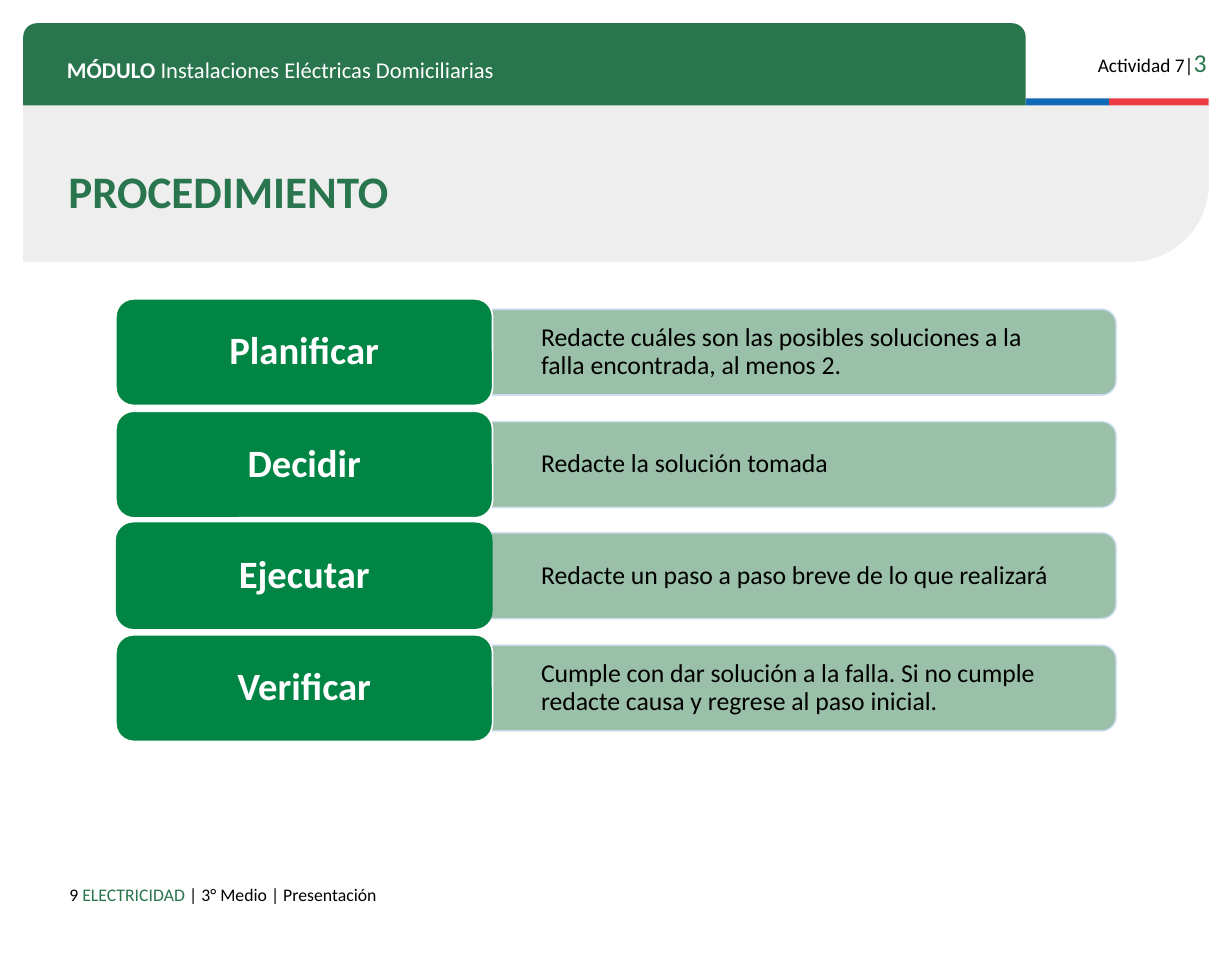
"""Build the PROCEDIMIENTO slide: module header, title band and four labelled steps."""
from lxml.etree import SubElement
from pptx import Presentation
from pptx.dml.color import RGBColor
from pptx.enum.shapes import MSO_SHAPE
from pptx.enum.text import MSO_ANCHOR, MSO_AUTO_SIZE, PP_ALIGN
from pptx.oxml.ns import qn
from pptx.util import Pt

PX = 9144
GREEN, WHITE, BLACK = "29754D", "FFFFFF", "000000"


def add_panel(kind, box, fill, line=None, corners=(), rotation=0, opacity=100):
    left, top, width, height = (value * PX for value in box)
    shape = slide.shapes.add_shape(kind, left, top, width, height)
    shape.shadow.inherit = False
    shape.rotation = rotation
    for index, corner in enumerate(corners):
        shape.adjustments[index] = corner
    shape.fill.solid()
    shape.fill.fore_color.rgb = RGBColor.from_string(fill)
    if line:
        shape.line.color.rgb = RGBColor.from_string(line)
        shape.line.width = Pt(1)
    else:
        shape.line.fill.background()
    if opacity < 100:
        for color in shape.element.spPr.iter(qn("a:srgbClr")):
            SubElement(color, qn("a:alpha"), val=str(opacity * 1000))
    return shape


def write_text(shape, runs, box=None, align=PP_ALIGN.LEFT, anchor=MSO_ANCHOR.TOP,
               spacing=1.0, margin=10):
    if box:
        shape.left, shape.top, shape.width, shape.height = (value * PX for value in box)
    frame = shape.text_frame
    frame.word_wrap = True
    frame.auto_size = MSO_AUTO_SIZE.NONE
    frame.vertical_anchor = anchor
    frame.margin_left = frame.margin_right = 10 * PX
    frame.margin_top = frame.margin_bottom = margin * PX
    paragraph = frame.paragraphs[0]
    paragraph.alignment = align
    paragraph.line_spacing = spacing
    for text, size, color, bold in runs:
        run = paragraph.add_run()
        run.text = text
        run.font.name = "Calibri"
        run.font.size = Pt(size)
        run.font.bold = bold
        run.font.color.rgb = RGBColor.from_string(color)


presentation = Presentation()
presentation.slide_width = 1063 * PX
presentation.slide_height = 827 * PX
slide = presentation.slides.add_slide(presentation.slide_layouts[5])

add_panel(MSO_SHAPE.ROUND_1_RECTANGLE, (464, -353, 135, 1023), "EEEEEE",
          corners=(0.5,), rotation=90)
add_panel(MSO_SHAPE.RECTANGLE, (885, 85, 72, 6), "0F69B4")
add_panel(MSO_SHAPE.RECTANGLE, (957, 85, 86, 6), "EB3C46")
add_panel(MSO_SHAPE.ROUND_2_SAME_RECTANGLE, (20, 20, 865, 71), GREEN, corners=(0.167, 0))

captions = [
    ((48, 38, 814, 35), PP_ALIGN.LEFT,
     [("MÓDULO", 14, WHITE, True),
      (" Instalaciones Eléctricas Domiciliarias", 14, WHITE, False)]),
    ((923, 30, 128, 38), PP_ALIGN.RIGHT,
     [("Actividad 7|", 12, BLACK, False), ("3", 16, GREEN, False)]),
    ((50, 753, 733, 38), PP_ALIGN.LEFT,
     [("9 ", 11, BLACK, False), ("ELECTRICIDAD ", 11, GREEN, False),
      ("| 3° Medio | Presentación", 11, BLACK, False)]),
]
for box, align, runs in captions:
    write_text(slide.shapes.add_textbox(0, 0, 0, 0), runs, box, align)

title = slide.shapes.title
slide.shapes.element.append(title.element)
write_text(title, [("PROCEDIMIENTO", 28, GREEN, True)], (49, 151, 979, 35),
           anchor=MSO_ANCHOR.MIDDLE, spacing=0.8)

steps = [
    ("Planificar", WHITE,
     "Redacte cuáles son las posibles soluciones a la falla encontrada, al menos 2."),
    ("Decidir", WHITE, "Redacte la solución tomada"),
    ("Ejecutar", None, "Redacte un paso a paso breve de lo que realizará"),
    ("Verificar", WHITE,
     "Cumple con dar solución a la falla. Si no cumple redacte causa y regrese al paso inicial."),
]
for row, (name, outline, description) in enumerate(steps):
    top = 258 + round(row * 290 / 3)
    add_panel(MSO_SHAPE.ROUND_2_SAME_RECTANGLE, (637, top - 243, 74, 578), "8EB99F",
              "CFDEEF", (0.167, 0), 90, 89)
    label = add_panel(MSO_SHAPE.ROUNDED_RECTANGLE, (100, top, 325, 92), "008544",
                      outline, (0.167,))
    write_text(label, [(name, 24, WHITE, True)], align=PP_ALIGN.CENTER,
               anchor=MSO_ANCHOR.MIDDLE, spacing=0.9)
    write_text(slide.shapes.add_textbox(0, 0, 0, 0), [(description, 16, BLACK, False)],
               (457, top + 13, 472, 66), anchor=MSO_ANCHOR.MIDDLE, spacing=0.9, margin=5)

presentation.save("out.pptx")
